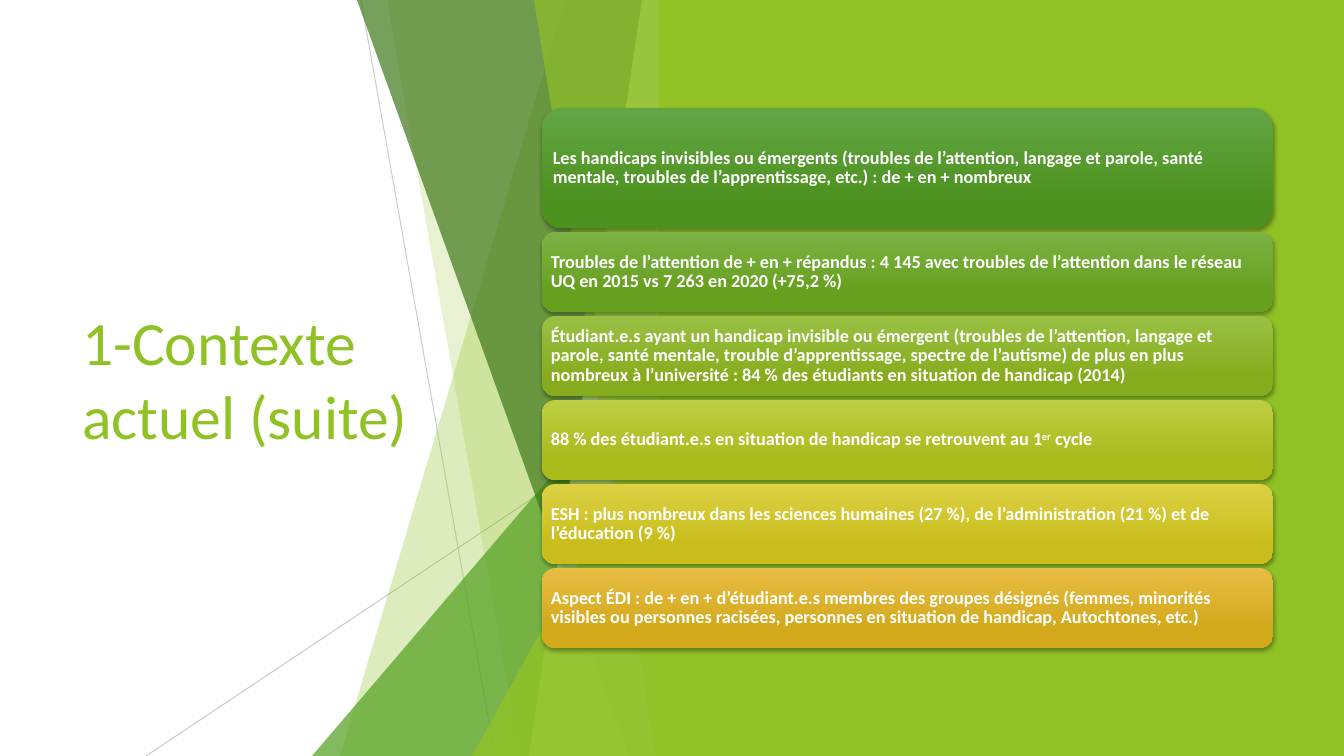
import pptx
import pptx.dml.color
import pptx.enum.shapes
import pptx.enum.text
import pptx.oxml
import pptx.oxml.ns
import pptx.util

RGBColor = pptx.dml.color.RGBColor
MSO_SHAPE = pptx.enum.shapes.MSO_SHAPE

PX = 914400 / 100.8
SLIDE_WIDTH, SLIDE_HEIGHT = 1344, 756
FONT = "Calibri"

WHITE = RGBColor(0xFF, 0xFF, 0xFF)
LIME = RGBColor(0x90, 0xC2, 0x26)
PALE_LIME = RGBColor(0xC0, 0xE4, 0x74)
GREEN = RGBColor(0x54, 0xA0, 0x21)
DARK_GREEN = RGBColor(0x3F, 0x78, 0x19)
GREY = RGBColor(0xBF, 0xBF, 0xBF)

FACET_RIGHT = 671
PANEL_LEFT, PANEL_TOP, PANEL_WIDTH, PANEL_GAP = 542, 108, 731, 4

# Height, top colour, bottom colour, text; ^ marks encloses superscripts
PANELS = [
    (120, RGBColor(0x63, 0xA5, 0x45), RGBColor(0x4D, 0x92, 0x1E),
     "Les handicaps invisibles ou émergents (troubles de l’attention, langage et parole, "
     "santé mentale, troubles de l’apprentissage, etc.) : de + en + nombreux"),
    (80, RGBColor(0x7B, 0xB2, 0x44), RGBColor(0x67, 0x9F, 0x1E),
     "Troubles de l’attention de + en + répandus : 4 145 avec troubles de l’attention "
     "dans le réseau UQ en 2015 vs 7 263 en 2020 (+75,2 %)"),
    (80, RGBColor(0x99, 0xC0, 0x44), RGBColor(0x86, 0xAC, 0x1D),
     "Étudiant.e.s ayant un handicap invisible ou émergent (troubles de l’attention, "
     "langage et parole, santé mentale, trouble d’apprentissage, spectre de l’autisme) "
     "de plus en plus nombreux à l’université : 84 % des étudiants en situation de "
     "handicap (2014)"),
    (80, RGBColor(0xBD, 0xCE, 0x43), RGBColor(0xA9, 0xBA, 0x1B),
     "88 % des étudiant.e.s en situation de handicap se retrouvent au 1^er^ cycle"),
    (80, RGBColor(0xDC, 0xD1, 0x43), RGBColor(0xC8, 0xBD, 0x1A),
     "ESH : plus nombreux dans les sciences humaines (27 %), de l’administration (21 %) "
     "et de l’éducation (9 %)"),
    (80, RGBColor(0xE7, 0xBC, 0x43), RGBColor(0xD2, 0xA9, 0x1B),
     "Aspect ÉDI : de + en + d’étudiant.e.s membres des groupes désignés (femmes, "
     "minorités visibles ou personnes racisées, personnes en situation de handicap, "
     "Autochtones, etc.)"),
]


def px(value):
    return pptx.util.Emu(round(value * PX))


def set_alpha(properties, opacity):
    """Give the first colour in a shape's properties an opacity in percent."""
    color = properties.find(".//" + pptx.oxml.ns.qn("a:srgbClr"))
    alpha = pptx.oxml.parse_xml(
        f'<a:alpha {pptx.oxml.ns.nsdecls("a")} val="{opacity * 1000}"/>')
    color.append(alpha)


def paint(shape, color, opacity=100):
    """Apply a flat fill without outline or shadow."""
    shape.shadow.inherit = False
    shape.fill.solid()
    shape.fill.fore_color.rgb = color
    shape.line.fill.background()
    if opacity < 100:
        set_alpha(shape._element.spPr, opacity)


def add_line(slide, start, end, opacity):
    line = slide.shapes.add_connector(
        pptx.enum.shapes.MSO_CONNECTOR.STRAIGHT, *map(px, start + end))
    line.line.color.rgb = GREY
    line.line.width = pptx.util.Pt(0.75)
    properties = line._element.spPr
    set_alpha(properties, opacity)
    properties.append(pptx.oxml.parse_xml(
        f'<a:effectLst {pptx.oxml.ns.nsdecls("a")}/>'))


def add_facet(slide, top_left, bottom_left, color, opacity):
    """Draw a full-height band with a slanted left edge."""
    builder = slide.shapes.build_freeform(px(top_left), 0)
    builder.add_line_segments([
        (px(FACET_RIGHT), 0), (px(FACET_RIGHT), px(SLIDE_HEIGHT)),
        (px(bottom_left), px(SLIDE_HEIGHT))], close=True)
    paint(builder.convert_to_shape(), color, opacity)


def add_corner(slide, left, top, color, opacity):
    """Draw a right triangle standing on the bottom edge of the slide."""
    triangle = slide.shapes.add_shape(
        MSO_SHAPE.ISOSCELES_TRIANGLE, px(left), px(top),
        px(FACET_RIGHT - left), px(SLIDE_HEIGHT - top))
    triangle.adjustments[0] = 1
    paint(triangle, color, opacity)


def add_backdrop(slide):
    add_line(slide, (361, 0), (495, 756), 75)
    add_line(slide, (671, 406), (146, 756), 80)
    add_facet(slide, 565, 340, LIME, 30)
    add_facet(slide, 387, 520, LIME, 20)
    add_corner(slide, 312, 336, GREEN, 72)
    add_facet(slide, 357, 629, DARK_GREEN, 70)
    add_facet(slide, 642, 529, PALE_LIME, 70)
    add_facet(slide, 534, 656, LIME, 65)
    add_corner(slide, 472, 396, LIME, 80)
    side = slide.shapes.add_shape(
        MSO_SHAPE.RECTANGLE, px(659), 0, px(SLIDE_WIDTH - 659), px(SLIDE_HEIGHT))
    paint(side, LIME)


def format_run(run, size, color, bold=False):
    run.font.name = FONT
    run.font.size = pptx.util.Pt(size)
    run.font.color.rgb = color
    run.font.bold = bold


def add_title(slide, text):
    title = slide.shapes.title
    title.left, title.top, title.width, title.height = map(px, (72, 152, 391, 452))
    frame = title.text_frame
    frame.text = text
    frame.word_wrap = True
    frame.auto_size = pptx.enum.text.MSO_AUTO_SIZE.NONE
    frame.vertical_anchor = pptx.enum.text.MSO_ANCHOR.MIDDLE
    paragraph = frame.paragraphs[0]
    paragraph.alignment = pptx.enum.text.PP_ALIGN.LEFT
    format_run(paragraph.runs[0], 44, LIME)


def add_soft_shadow(shape):
    shape.shadow.inherit = False
    effects = shape._element.spPr.find(pptx.oxml.ns.qn("a:effectLst"))
    effects.append(pptx.oxml.parse_xml(
        f'<a:outerShdw {pptx.oxml.ns.nsdecls("a")} blurRad="38100" dist="25400" '
        'dir="5400000" rotWithShape="0"><a:srgbClr val="000000">'
        '<a:alpha val="35000"/></a:srgbClr></a:outerShdw>'))


def add_panel(slide, top, height, top_color, bottom_color, text):
    panel = slide.shapes.add_shape(
        MSO_SHAPE.ROUNDED_RECTANGLE, px(PANEL_LEFT), px(top), px(PANEL_WIDTH), px(height))
    panel.line.fill.background()
    panel.fill.gradient()
    panel.fill.gradient_angle = 270
    stops = panel.fill.gradient_stops
    for stop, position, color in zip(stops, (0, 0.78), (top_color, bottom_color)):
        stop.position = position
        stop.color.rgb = color
    add_soft_shadow(panel)

    frame = panel.text_frame
    frame.word_wrap = True
    frame.vertical_anchor = pptx.enum.text.MSO_ANCHOR.MIDDLE
    frame.margin_left = frame.margin_right = px(5)
    frame.margin_top = frame.margin_bottom = px(5)
    paragraph = frame.paragraphs[0]
    paragraph.alignment = pptx.enum.text.PP_ALIGN.LEFT
    paragraph.line_spacing = 0.9
    for index, piece in enumerate(text.split("^")):
        run = paragraph.add_run()
        run.text = piece
        format_run(run, 13, WHITE, bold=True)
        if index % 2:
            run._r.get_or_add_rPr().set("baseline", "30000")


def main():
    presentation = pptx.Presentation()
    presentation.slide_width = px(SLIDE_WIDTH)
    presentation.slide_height = px(SLIDE_HEIGHT)
    slide = presentation.slides.add_slide(presentation.slide_layouts[5])
    add_title(slide, "1-Contexte actuel (suite)")
    add_backdrop(slide)
    top = PANEL_TOP
    for height, top_color, bottom_color, text in PANELS:
        add_panel(slide, top, height, top_color, bottom_color, text)
        top += height + PANEL_GAP
    presentation.save("out.pptx")


if __name__ == "__main__":
    main()
